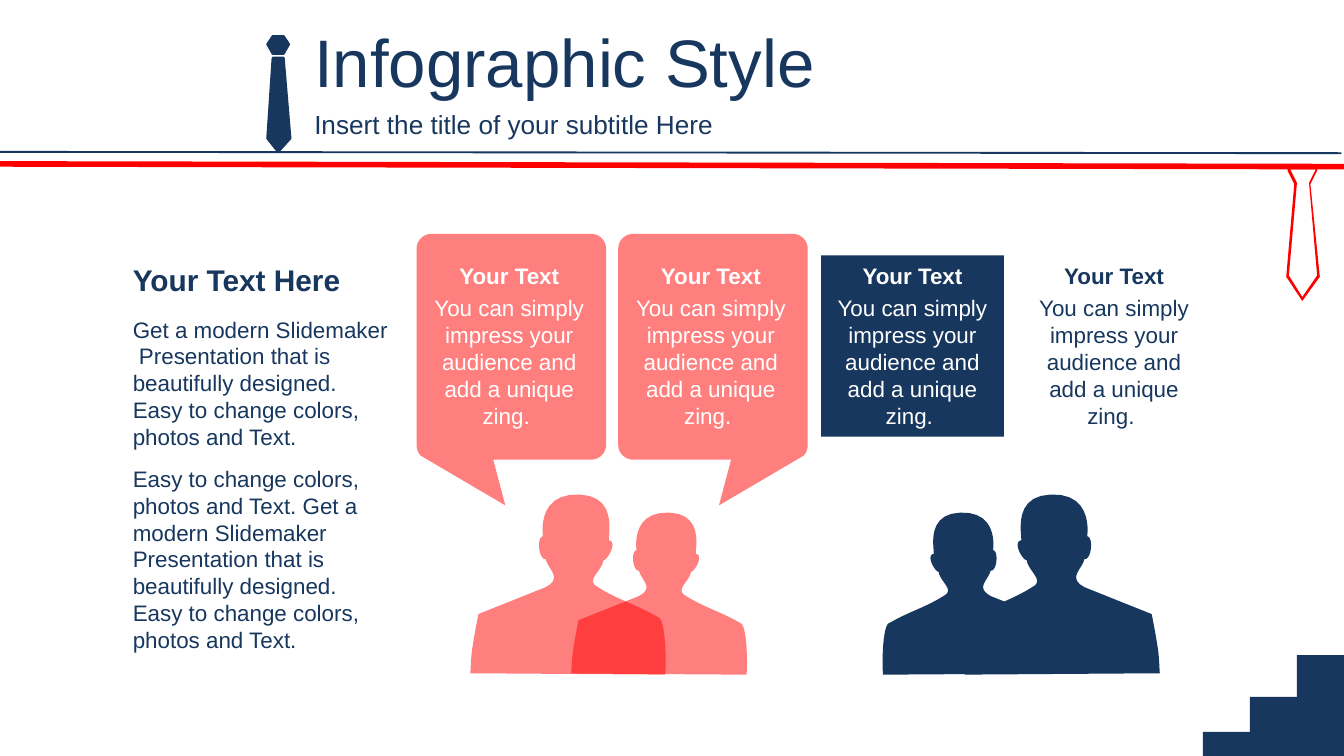
import pptx
import pptx.dml.color
import pptx.enum.shapes
import pptx.enum.text
import pptx.oxml.ns
import pptx.util
from lxml import etree

Inches, Pt = pptx.util.Inches, pptx.util.Pt
qn = pptx.oxml.ns.qn
ALIGN = pptx.enum.text.PP_ALIGN
ANCHOR = pptx.enum.text.MSO_ANCHOR

SLIDE_W = 10
SLIDE_H = SLIDE_W * 9 / 16
COLORS = {"navy": "17375E", "red": "FF0000", "white": "FFFFFF"}
FONT = "Arial"

# Outlines in inches from the top left of their box: a pair is a straight
# line to that point, a triple of pairs is a Bezier curve
PERSON_W, PERSON_H = 1.45, 1.34
PERSON = [
    (1.45, 1.34),
    ((1.46, 1.21), (1.45, 0.97), (1.41, 0.92)),
    ((1.22, 0.81), (1.11, 0.79), (0.95, 0.69)),
    ((0.85, 0.64), (0.98, 0.57), (0.99, 0.49)),
    ((1.02, 0.49), (1.10, 0.35), (1.03, 0.34)),
    ((1.03, 0.28), (1.09, 0.01), (0.81, 0)),
    ((0.53, -0.01), (0.53, 0.23), (0.54, 0.31)),
    ((0.49, 0.32), (0.51, 0.49), (0.56, 0.48)),
    ((0.58, 0.56), (0.69, 0.62), (0.56, 0.69)),
    (0.06, 0.89),
    ((0, 1.2), (0.01, 1.18), (0, 1.33)),
]
BUBBLE_W = 1.41
BUBBLE = [
    (0.11, 0), (1.3, 0),
    ((1.36, 0), (1.41, 0.05), (1.41, 0.11)), (1.41, 1.57),
    ((1.41, 1.63), (1.36, 1.68), (1.3, 1.68)),
    (0.57, 1.68), (0.66, 2.02), (0.03, 1.65),
    ((0.01, 1.63), (0, 1.6), (0, 1.57)), (0, 0.11),
    ((0, 0.05), (0.05, 0), (0.11, 0)),
]
KNOT = [(0, 0.06), (0.04, 0), (0.12, 0), (0.16, 0.06), (0.12, 0.13), (0.04, 0.13)]
BLADE = [(0.17, 0.76), (0.08, 0.86), (0, 0.76), (0.04, 0.16), (0.12, 0.16)]
TIE_OUTER = [(0.01, 0), (0.23, 0), (0.23, 0.03), (0.18, 0.13), (0.25, 0.82),
             (0.12, 1), (0, 0.82), (0.06, 0.13), (0.01, 0.03)]
TIE_INNER = [(0.08, 0.12), (0.02, 0.81), (0.12, 0.97), (0.23, 0.81),
             (0.17, 0.12), (0.22, 0.02), (0.03, 0.02)]


def rgb(name):
    return pptx.dml.color.RGBColor.from_string(COLORS[name])


def paint(sp, color, alpha=None, line=None):
    sp.shadow.inherit = False
    sp.fill.solid()
    sp.fill.fore_color.rgb = rgb(color)
    if alpha:
        clr = sp._element.spPr.find(qn("a:solidFill"))[0]
        etree.SubElement(clr, qn("a:alpha"), val=str(alpha * 1000))
    if line:
        sp.line.color.rgb = rgb(color)
        sp.line.width = Pt(line)
    else:
        sp.line.fill.background()


def flatten(outline, steps=10):
    """Turn an outline with curves into a plain list of points."""
    points = []
    for part in outline:
        if len(part) == 2:
            points.append(part)
            continue
        curve = (points[-1], *part)
        for i in range(1, steps + 1):
            t = i / steps
            weights = ((1 - t) ** 3, 3 * t * (1 - t) ** 2, 3 * t * t * (1 - t), t ** 3)
            points.append(tuple(sum(w * pt[k] for w, pt in zip(weights, curve))
                                for k in (0, 1)))
    return points


def add_outline(s, left, top, outlines, color, scale=1, flip_width=None, **look):
    def place(x, y):
        x = flip_width - x if flip_width else x
        return Inches(left + x * scale), Inches(top + y * scale)

    builder = None
    for outline in outlines:
        first, *rest = [place(*pt) for pt in flatten(outline)]
        if builder is None:
            builder = s.shapes.build_freeform(*first)
        else:
            builder.move_to(*first)
        builder.add_line_segments(rest, close=True)
    paint(builder.convert_to_shape(), color, **look)


def add_rect(s, left, top, width, height, color):
    sp = s.shapes.add_shape(pptx.enum.shapes.MSO_SHAPE.RECTANGLE, Inches(left),
                            Inches(top), Inches(width), Inches(height))
    paint(sp, color)
    return sp


def add_line(s, x1, y1, x2, y2, color, width):
    sp = s.shapes.add_connector(pptx.enum.shapes.MSO_CONNECTOR.STRAIGHT,
                                Inches(x1), Inches(y1), Inches(x2), Inches(y2))
    sp.line.color.rgb = rgb(color)
    sp.line.width = Pt(width)
    etree.SubElement(sp._element.spPr, qn("a:effectLst"))


def add_text(s, text, left, top, width, height, size=12, color="navy", bold=False,
             align=ALIGN.LEFT, anchor=ANCHOR.TOP, before=0, fill=None):
    if fill:
        sp = add_rect(s, left, top, width, height, fill)
    else:
        sp = s.shapes.add_textbox(Inches(left), Inches(top), Inches(width), Inches(height))
    tf = sp.text_frame
    tf.word_wrap = True
    tf.vertical_anchor = anchor
    p = tf.paragraphs[0]
    p.alignment = align
    p.space_before = Pt(before)
    r = p.add_run()
    r.text = text
    r.font.name, r.font.size, r.font.bold = FONT, Pt(size), bold
    r.font.color.rgb = rgb(color)


def add_stairs(s, left, bottom):
    for i, height in enumerate((0.18, 0.44, 0.75)):
        add_rect(s, left + 0.35 * i, bottom - height, 0.35, height, "navy")


def add_header(s, left, top):
    for part in (KNOT, BLADE):
        add_outline(s, left, top, [part], "navy", line=1.25)
    for text, dy, height, size in (("Infographic Style", -0.13, 0.63, 36),
                                   ("Insert the title of your subtitle Here", 0.5, 0.31, 14)):
        add_text(s, text, left + 0.25, top + dy, 7.76, height, size=size,
                 anchor=ANCHOR.MIDDLE, before=size * 0.1)
    add_line(s, 0, top + 0.95, SLIDE_W, top + 0.97, "red", 3)
    add_line(s, -0.02, top + 0.86, SLIDE_W - 0.02, top + 0.87, "navy", 1)
    add_outline(s, left + 7.58, top + 0.97, [TIE_OUTER, TIE_INNER], "red")


def add_people(s, small_left, large_left, bottom, color, flip=False, alpha=None):
    for left, scale in ((small_left, 0.9), (large_left, 1)):
        add_outline(s, left, bottom - PERSON_H * scale, [PERSON], color, scale=scale,
                    flip_width=PERSON_W if flip else None, alpha=alpha)


def add_bubble(s, left, top, color, alpha, text_color, text_fill, flip):
    add_outline(s, left, top, [BUBBLE], color, alpha=alpha,
                flip_width=BUBBLE_W if flip else None)
    look = dict(color=text_color, fill=text_fill, align=ALIGN.CENTER)
    add_text(s, "You can simply impress your audience and add a unique zing. ",
             left + 0.01, top + 0.4, 1.36, 1.11, **look)
    add_text(s, "Your Text", left + 0.01, top + 0.16, 1.36, 0.3, bold=True, **look)


def add_side_text(s, left, top, width):
    add_text(s, "Get a modern Slidemaker  Presentation that is beautifully designed.  "
                "Easy to change colors, photos and Text.", left, top + 0.4, width, 1.11)
    add_text(s, "Easy to change colors, photos and Text. Get a modern Slidemaker  "
                "Presentation that is beautifully designed.  Easy to change colors, "
                "photos and Text.", left, top + 1.51, width, 1.51)
    add_text(s, "Your Text Here", left, top, width, 0.37, size=16, bold=True)


def main():
    prs = pptx.Presentation()
    prs.slide_width, prs.slide_height = Inches(SLIDE_W), Inches(SLIDE_H)
    s = prs.slides.add_slide(prs.slide_layouts[6])

    add_stairs(s, 8.95, SLIDE_H)
    add_header(s, 1.99, 0.27)
    add_people(s, 4.25, 3.5, 5.02, "red", alpha=50)
    add_people(s, 6.57, 7.18, 5.02, "navy", flip=True)

    # Speech bubbles, their tails turned inwards in pairs
    bubbles = [("red", 50, "white", None), ("red", 50, "white", None),
               ("white", 60, "white", "navy"), ("white", 60, "navy", None)]
    for i, look in enumerate(bubbles):
        add_bubble(s, 3.1 + 1.5 * i, 1.74, *look, flip=i % 2 == 1)

    add_side_text(s, 0.89, 1.9, 2.13)
    prs.save("out.pptx")


if __name__ == "__main__":
    main()
